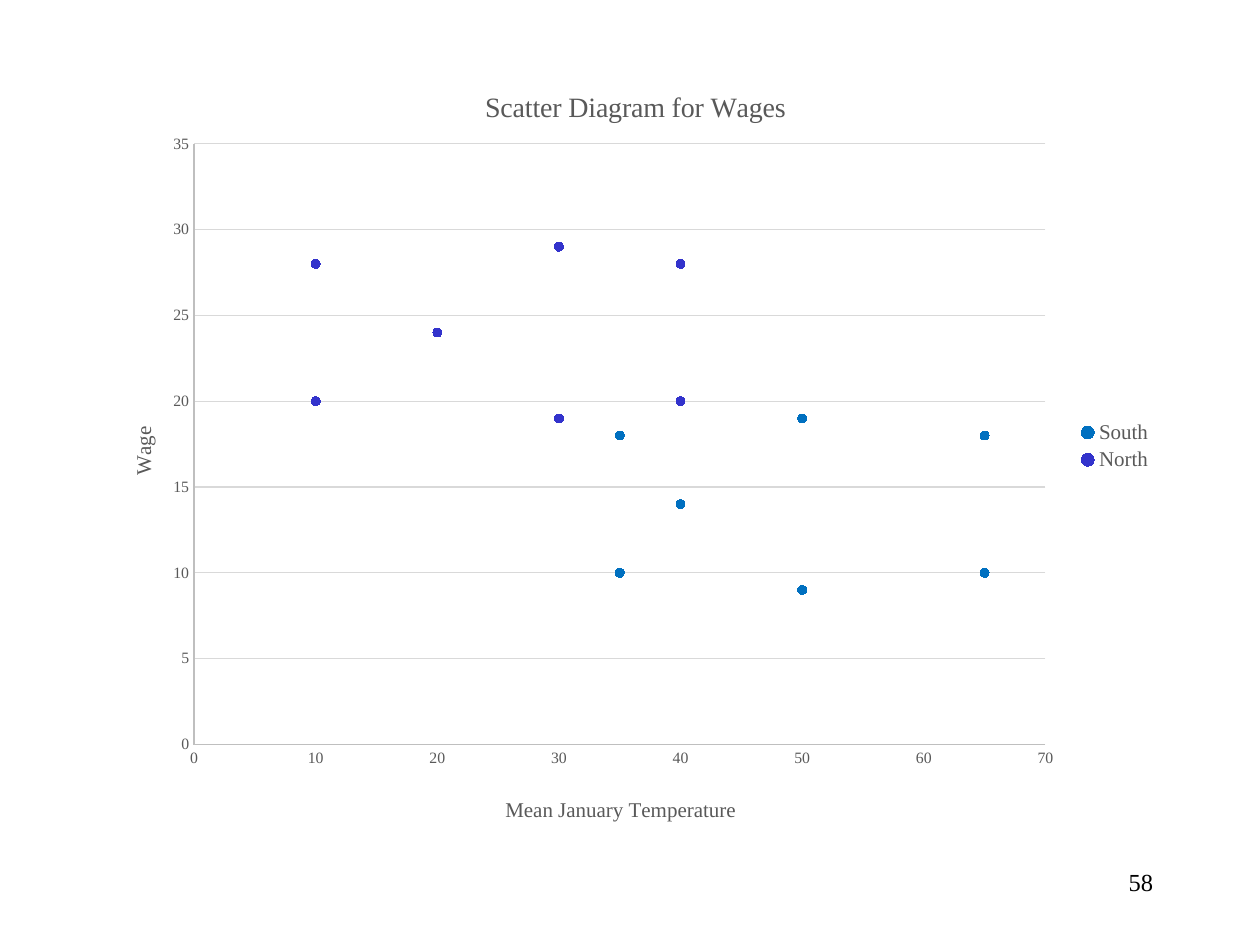
from dataclasses import dataclass

from pptx import Presentation
from pptx.chart.data import XyChartData
from pptx.dml.color import RGBColor
from pptx.enum import chart as charts, text
from pptx.oxml import parse_xml
from pptx.oxml.ns import nsdecls
from pptx.util import Pt


@dataclass(frozen=True)
class Theme:
    font: str = "Times New Roman"
    black: str = "000000"
    label: str = "595959"
    axis: str = "BFBFBF"
    grid: str = "D9D9D9"
    south: str = "0070C0"
    north: str = "3333CC"
    title_size: int = 16
    number_size: int = 14
    label_size: int = 12
    tick_size: int = 9


THEME = Theme()


def set_font(font, size, color):
    font.name = THEME.font
    font.size = Pt(size)
    font.bold = False
    font.color.rgb = RGBColor.from_string(color)


def place(element, index, target, **fractions):
    """Fix a chart part at fractions of the chart's width and height."""
    for layout in element.xpath("c:layout"):
        element.remove(layout)
    inner = f'<c:layoutTarget val="{target}"/>' if target else ""
    modes = '<c:xMode val="edge"/><c:yMode val="edge"/>'
    values = "".join(f'<c:{key} val="{value}"/>' for key, value in fractions.items())
    element.insert(index, parse_xml(
        f'<c:layout {nsdecls("c")}><c:manualLayout>{inner}{modes}{values}'
        "</c:manualLayout></c:layout>"))


deck = Presentation()
deck.slide_width, deck.slide_height = Pt(720), Pt(540)
page = deck.slides.add_slide(deck.slide_layouts[6])

# Slide number
box = page.shapes.add_textbox(Pt(516), Pt(492), Pt(150), Pt(36))
box.text_frame.word_wrap = True
para = box.text_frame.paragraphs[0]
para.text = "58"
para.alignment = text.PP_ALIGN.RIGHT
set_font(para.font, THEME.number_size, THEME.black)

# Wages by mean January temperature
regions = {
    "South": (THEME.south, [(35, 18), (35, 10), (40, 14), (50, 19), (50, 9), (65, 18), (65, 10)]),
    "North": (THEME.north, [(10, 28), (10, 20), (20, 24), (30, 29), (30, 19), (40, 28), (40, 20)]),
}
data = XyChartData()
for name, (color, points) in regions.items():
    series = data.add_series(name)
    for temperature, wage in points:
        series.add_data_point(temperature, wage)
chart = page.shapes.add_chart(
    charts.XL_CHART_TYPE.XY_SCATTER, Pt(54), Pt(30), Pt(612), Pt(450), data).chart
set_font(chart.font, THEME.label_size, THEME.label)
chart.plots[0].vary_by_categories = False

for series, (color, points) in zip(chart.plots[0].series, regions.values()):
    series.format.line.fill.background()
    marker = series.marker
    marker.style = charts.XL_MARKER_STYLE.CIRCLE
    marker.size = 5
    for fill in (marker.format.fill, marker.format.line.fill):
        fill.solid()
        fill.fore_color.rgb = RGBColor.from_string(color)

# Axes
temperature_axis, wage_axis = chart.category_axis, chart.value_axis
for axis, top, step in ((temperature_axis, 70, 10), (wage_axis, 35, 5)):
    axis.minimum_scale, axis.maximum_scale, axis.major_unit = 0, top, step
    axis.major_tick_mark = axis.minor_tick_mark = charts.XL_TICK_MARK.NONE
    axis.format.line.color.rgb = RGBColor.from_string(THEME.axis)
    axis.format.line.width = Pt(0.75)
    set_font(axis.tick_labels.font, THEME.tick_size, THEME.label)
temperature_axis.has_major_gridlines = False
wage_axis.has_major_gridlines = True
grid = wage_axis.major_gridlines.format.line
grid.color.rgb = RGBColor.from_string(THEME.grid)
grid.width = Pt(0.75)

# Titles
titles = (
    (chart, "Scatter Diagram for Wages", THEME.title_size, 0.36, 0.04),
    (temperature_axis, "Mean January Temperature", THEME.label_size, 0.38, 0.94),
    (wage_axis, "Wage", THEME.label_size, 0.03, 0.47),
)
for owner, words, size, x, y in titles:
    owner.has_title = True
    title = owner.chart_title if owner is chart else owner.axis_title
    para = title.text_frame.paragraphs[0]
    para.text = words
    set_font(para.font, size, THEME.label)
    place(title.text_frame._txBody.xpath("ancestor::c:title")[0], 1, "", x=x, y=y)
wage_body = wage_axis.axis_title.text_frame._txBody.xpath("a:bodyPr")[0]
wage_body.set("rot", "-5400000")
wage_body.set("vert", "horz")

# Legend and plot area
chart.has_legend = True
chart.legend.position = charts.XL_LEGEND_POSITION.RIGHT
chart.legend.include_in_layout = False
set_font(chart.legend.font, THEME.label_size, THEME.label)
plot_area = chart.element.xpath("c:chart/c:plotArea")[0] if hasattr(chart, "element") \
    else chart._chartSpace.xpath("c:chart/c:plotArea")[0]
place(plot_area, 0, "inner", x=0.093, y=0.116, w=0.795, h=0.763)

deck.save("out.pptx")
